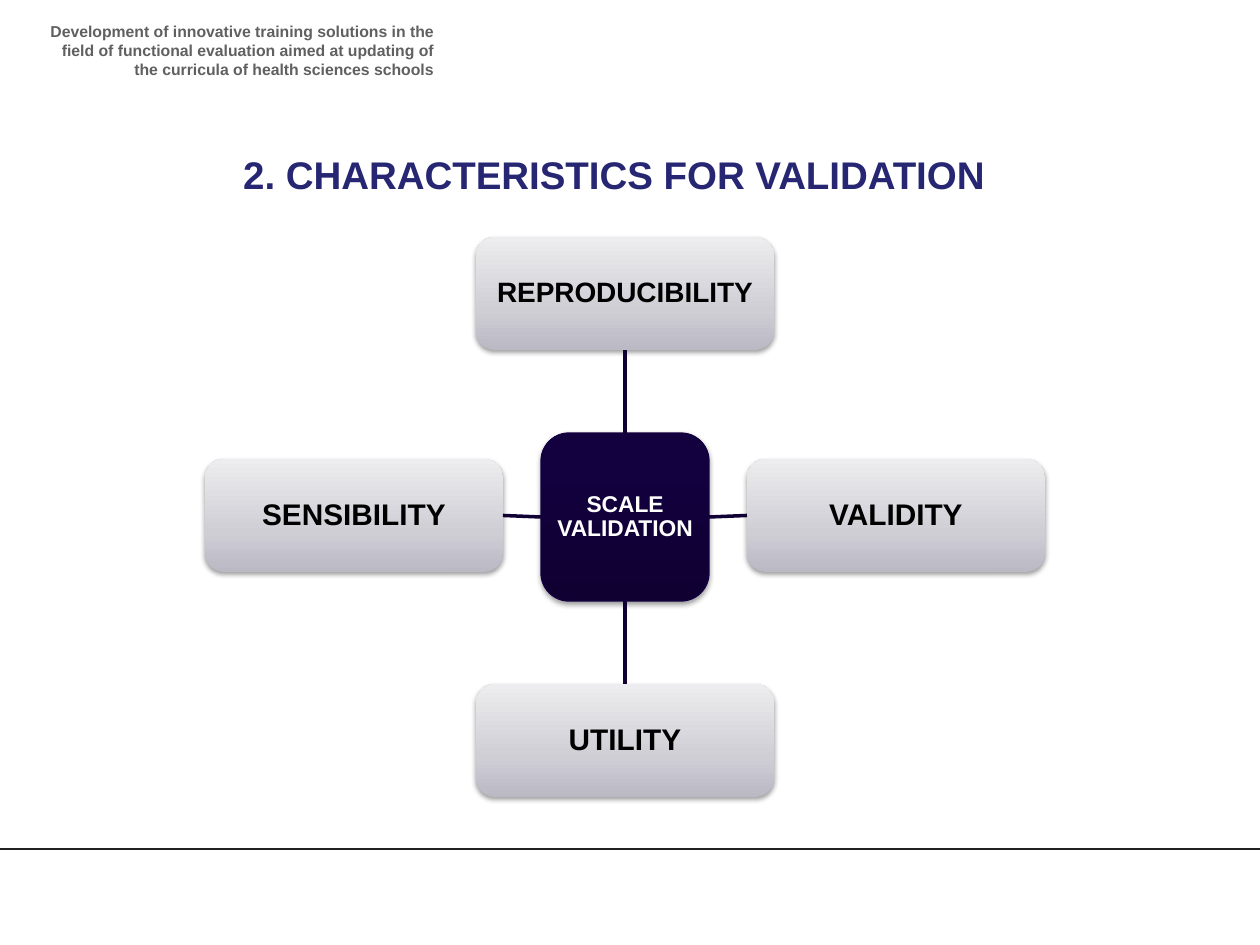
from lxml import etree
from pptx import Presentation
from pptx.dml.color import RGBColor
from pptx.enum.shapes import MSO_CONNECTOR, MSO_SHAPE
from pptx.enum.text import MSO_ANCHOR, PP_ALIGN
from pptx.oxml.ns import qn
from pptx.util import Emu, Pt

STRAIGHT = MSO_CONNECTOR.STRAIGHT
ROUNDED = MSO_SHAPE.ROUNDED_RECTANGLE
MIDDLE, TOP = MSO_ANCHOR.MIDDLE, MSO_ANCHOR.TOP
CENTER, RIGHT = PP_ALIGN.CENTER, PP_ALIGN.RIGHT

BLACK = RGBColor(0x00, 0x00, 0x00)
WHITE = RGBColor(0xFF, 0xFF, 0xFF)
GRAY = RGBColor(0x60, 0x60, 0x60)
NAVY = RGBColor(0x26, 0x26, 0x73)
RULE = RGBColor(0x20, 0x20, 0x20)
SPOKE = RGBColor(0x10, 0x00, 0x34)
HUB_EDGE = RGBColor(0x14, 0x00, 0x40)
HUB_STOPS = [
    (0, RGBColor(0x0F, 0x00, 0x31)),
    (80, RGBColor(0x13, 0x00, 0x3F)),
    (100, RGBColor(0x13, 0x00, 0x3F)),
]
BOX_STOPS = [
    (0, RGBColor(0xBA, 0xB9, 0xC4)),
    (35, RGBColor(0xCF, 0xCE, 0xD5)),
    (100, RGBColor(0xED, 0xED, 0xEF)),
]
PX = 914400 / 126


def write(tf, text, size, color, align, anchor):
    tf.word_wrap = True
    tf.vertical_anchor = anchor
    p = tf.paragraphs[0]
    p.text = text
    p.alignment = align
    p.font.name = "Arial"
    p.font.size = Pt(size)
    p.font.bold = True
    p.font.color.rgb = color
    return p


def add_card(x, y, w, h, text, size, color, stops, inset):
    sp = s.shapes.add_shape(ROUNDED, *[Emu(round(v * PX)) for v in (x, y, w, h)])
    sp.fill.gradient()
    grad = sp._element.spPr.find(qn("a:gradFill"))
    gs_list = grad.find(qn("a:gsLst"))
    for gs in list(gs_list):
        gs_list.remove(gs)
    for pos, rgb in stops:
        gs = etree.SubElement(gs_list, qn("a:gs"), pos=str(pos * 1000))
        etree.SubElement(gs, qn("a:srgbClr"), val=str(rgb))
    grad.find(qn("a:lin")).set("ang", "16200000")
    sp.line.fill.background()
    sp.shadow.inherit = False
    effects = sp._element.spPr.find(qn("a:effectLst"))
    shadow = etree.SubElement(effects, qn("a:outerShdw"), blurRad=str(Pt(3)),
                              dist=str(Pt(1.6)), dir="5400000", rotWithShape="0")
    clr = etree.SubElement(shadow, qn("a:srgbClr"), val="000000")
    etree.SubElement(clr, qn("a:alpha"), val="38000")
    tf = sp.text_frame
    tf.margin_left = tf.margin_right = tf.margin_top = tf.margin_bottom = Emu(round(inset * PX))
    write(tf, text, size, color, CENTER, MIDDLE).line_spacing = 0.9
    return sp


prs = Presentation()
prs.slide_width = Emu(round(1260 * PX))
prs.slide_height = Emu(round(945 * PX))
s = prs.slides.add_slide(prs.slide_layouts[5])

title = s.shapes.title
title.left, title.top, title.width, title.height = [Emu(round(v * PX)) for v in (73, 145, 1082, 59)]
write(title.text_frame, "2. CHARACTERISTICS FOR VALIDATION", 22, NAVY, CENTER, TOP)

header = s.shapes.add_textbox(*[Emu(round(v * PX)) for v in (35, 16, 411, 59)])
write(header.text_frame,
      "Development of innovative training solutions in the ﬁeld of functional evaluation "
      "aimed at updating of the curricula of health sciences schools",
      9, GRAY, RIGHT, TOP)

hub = add_card(541, 433, 168, 168, "SCALE VALIDATION", 13, WHITE, HUB_STOPS, 5)
hub.line.color.rgb = HUB_EDGE
hub.line.width = Pt(0.75)

lines = []
for x, y, text, size, hub_side, box_side in [
    (476, 237, "REPRODUCIBILITY", 16, 0, 2),
    (747, 459, "VALIDITY", 17, 3, 1),
    (476, 684, "UTILITY", 17, 2, 0),
    (205, 459, "SENSIBILITY", 17, 1, 3),
]:
    box = add_card(x, y, 298, 113, text, size, BLACK, BOX_STOPS, 6)
    spoke = s.shapes.add_connector(STRAIGHT, 0, 0, 0, 0)
    spoke.begin_connect(hub, hub_side)
    spoke.end_connect(box, box_side)
    lines.append((spoke, SPOKE, 2))

y = Emu(round(849 * PX))
rule = s.shapes.add_connector(STRAIGHT, 0, y, prs.slide_width, y)
lines.append((rule, RULE, 0.75))

for line, color, width in lines:
    line.line.color.rgb = color
    line.line.width = Pt(width)
    etree.SubElement(line._element.spPr, qn("a:effectLst"))

prs.save("out.pptx")
